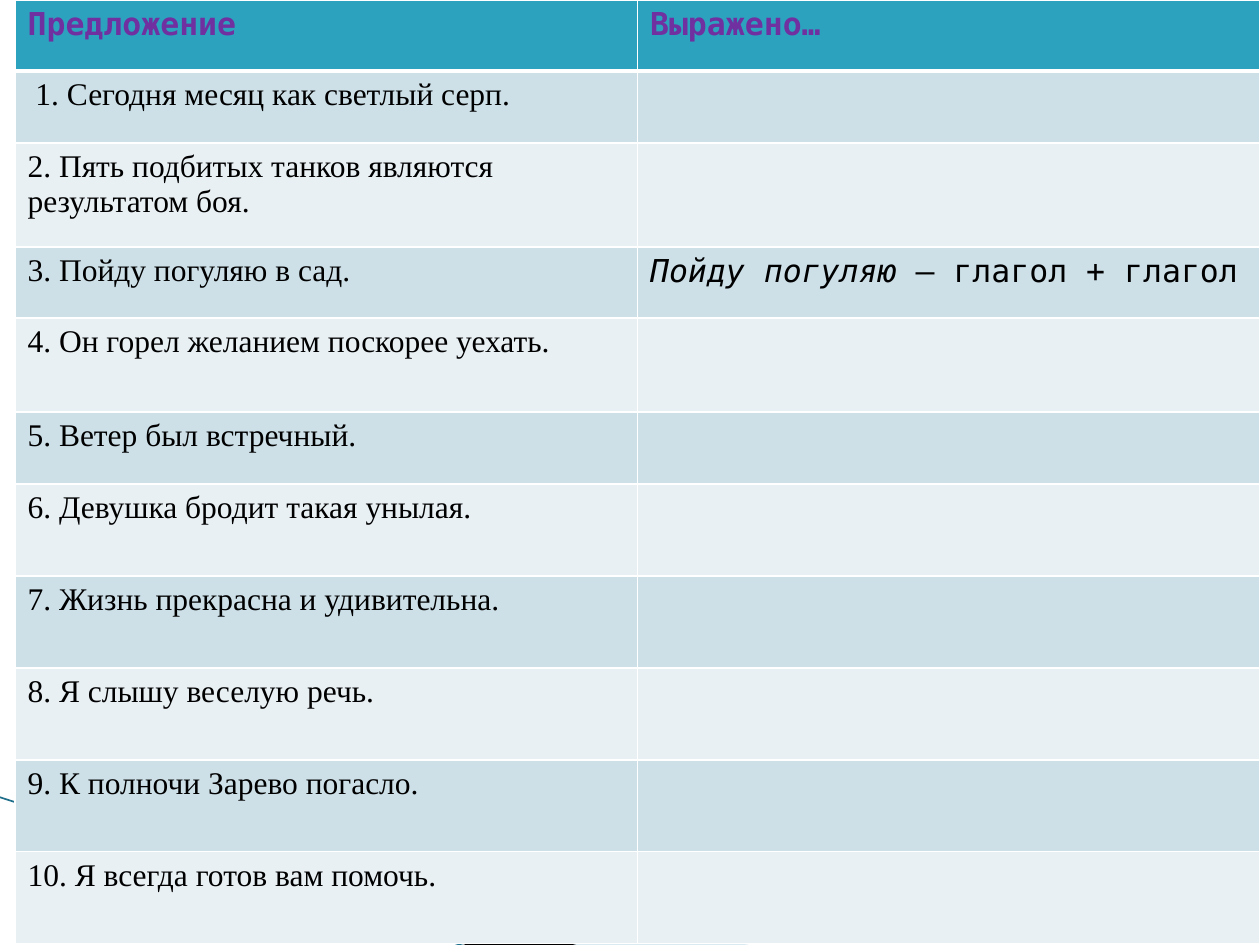
from lxml import etree
from pptx import Presentation
from pptx.dml.color import RGBColor
from pptx.enum.shapes import MSO_CONNECTOR
from pptx.oxml.ns import qn
from pptx.util import Emu, Pt

STRAIGHT = MSO_CONNECTOR.STRAIGHT
SCALE = 914400 / 126
PAGE_W, PAGE_H = 1260, 945
MONO, SERIF = "DejaVu Sans Mono", "Times New Roman"
HEADER_FILL = "2DA2BF"
BAND_FILLS = ("CDE0E8", "E8F0F4")
ROW_HEIGHTS = [71, 72, 104, 71, 94, 72] + [92] * 5
HEADINGS = ("Предложение", "Выражено…")
SENTENCES = (
    " 1. Сегодня месяц как светлый серп.",
    "2. Пять подбитых танков являются результатом боя.",
    "3. Пойду погуляю в сад.",
    "4. Он горел желанием поскорее уехать.",
    "5. Ветер был встречный.",
    "6. Девушка бродит такая унылая.",
    "7. Жизнь прекрасна и удивительна.",
    "8. Я слышу веселую речь.",
    "9. К полночи Зарево погасло.",
    "10. Я всегда готов вам помочь.",
)
EXAMPLE_ROW = 3


def px(value):
    return Emu(round(value * SCALE))


def color(hex_text):
    return RGBColor.from_string(hex_text)


def add_text(para, text, font=SERIF, size=18, fill="000000", bold=False, italic=False):
    span = para.add_run()
    span.text = text
    span.font.name = font
    span.font.size = Pt(size)
    span.font.bold = bold
    span.font.italic = italic
    span.font.color.rgb = color(fill)


def style_cell(cell, fill, top=1, bottom=1):
    """Fill the cell and give it white borders, with widths in points."""
    cell.fill.solid()
    cell.fill.fore_color.rgb = color(fill)
    props = cell._tc.get_or_add_tcPr()
    sides = (("lnL", 1), ("lnR", 1), ("lnT", top), ("lnB", bottom))
    for index, (side, width) in enumerate(sides):
        border = etree.Element(qn(f"a:{side}"), w=str(Pt(width)))
        solid = etree.SubElement(border, qn("a:solidFill"))
        etree.SubElement(solid, qn("a:srgbClr"), val="FFFFFF")
        props.insert(index, border)


def add_sliver(page, left, top, points, fill, opacity=100):
    """Draw a filled outline whose points are relative to left and top."""
    corners = [(left + x, top + y) for x, y in points]
    builder = page.shapes.build_freeform(*corners[0], scale=SCALE)
    builder.add_line_segments(corners[1:], close=True)
    shape = builder.convert_to_shape()
    shape.shadow.inherit = False
    shape.fill.solid()
    shape.fill.fore_color.rgb = color(fill)
    shape.line.fill.background()
    if opacity < 100:
        tint = shape.fill._xPr.find(qn("a:solidFill"))[0]
        etree.SubElement(tint, qn("a:alpha"), val=str(opacity * 1000))


def add_corner_decoration(page, left, top, width, height):
    right, bottom = left + width, top + height
    add_sliver(page, left + 70, top + 22,
               [(0, 0), (680, 126), (505, 126), (0, -1)], "A0CBDC", opacity=40)
    add_sliver(page, left + 68, top + 20,
               [(0, 0), (509, 128), (402, 129), (1, 1)], "000000")
    edge = page.shapes.add_connector(STRAIGHT, px(left), px(top), px(right), px(bottom))
    edge.line.color.rgb = color("1F6F8B")
    edge.line.width = Pt(0.95)
    etree.SubElement(edge._element.spPr, qn("a:effectLst"))


def add_sentence_table(page, left, top, width, height):
    frame = page.shapes.add_table(len(ROW_HEIGHTS), len(HEADINGS),
                                  px(left), px(top), px(width), px(height))
    table = frame.table
    for column in table.columns:
        column.width = px(width / len(HEADINGS))
    for row, row_height in zip(table.rows, ROW_HEIGHTS):
        row.height = px(row_height)

    for cell, heading in zip(table.rows[0].cells, HEADINGS):
        style_cell(cell, HEADER_FILL, bottom=3)
        add_text(cell.text_frame.paragraphs[0], heading,
                 font=MONO, fill="7030A0", bold=True)
    for number, sentence in enumerate(SENTENCES, 1):
        for cell in table.rows[number].cells:
            style_cell(cell, BAND_FILLS[(number - 1) % 2], top=3 if number == 1 else 1)
        add_text(table.cell(number, 0).text_frame.paragraphs[0], sentence)

    example = table.cell(EXAMPLE_ROW, 1).text_frame.paragraphs[0]
    add_text(example, "Пойду погуляю ", font=MONO, italic=True)
    add_text(example, "– глагол + глагол", font=MONO)


def main():
    deck = Presentation()
    deck.slide_width, deck.slide_height = px(PAGE_W), px(PAGE_H)
    page = deck.slides.add_slide(deck.slide_layouts[6])
    add_corner_decoration(page, -1, 797, 468, 150)
    add_sentence_table(page, 15, 0, PAGE_W - 15, sum(ROW_HEIGHTS))
    deck.save("out.pptx")


if __name__ == "__main__":
    main()
